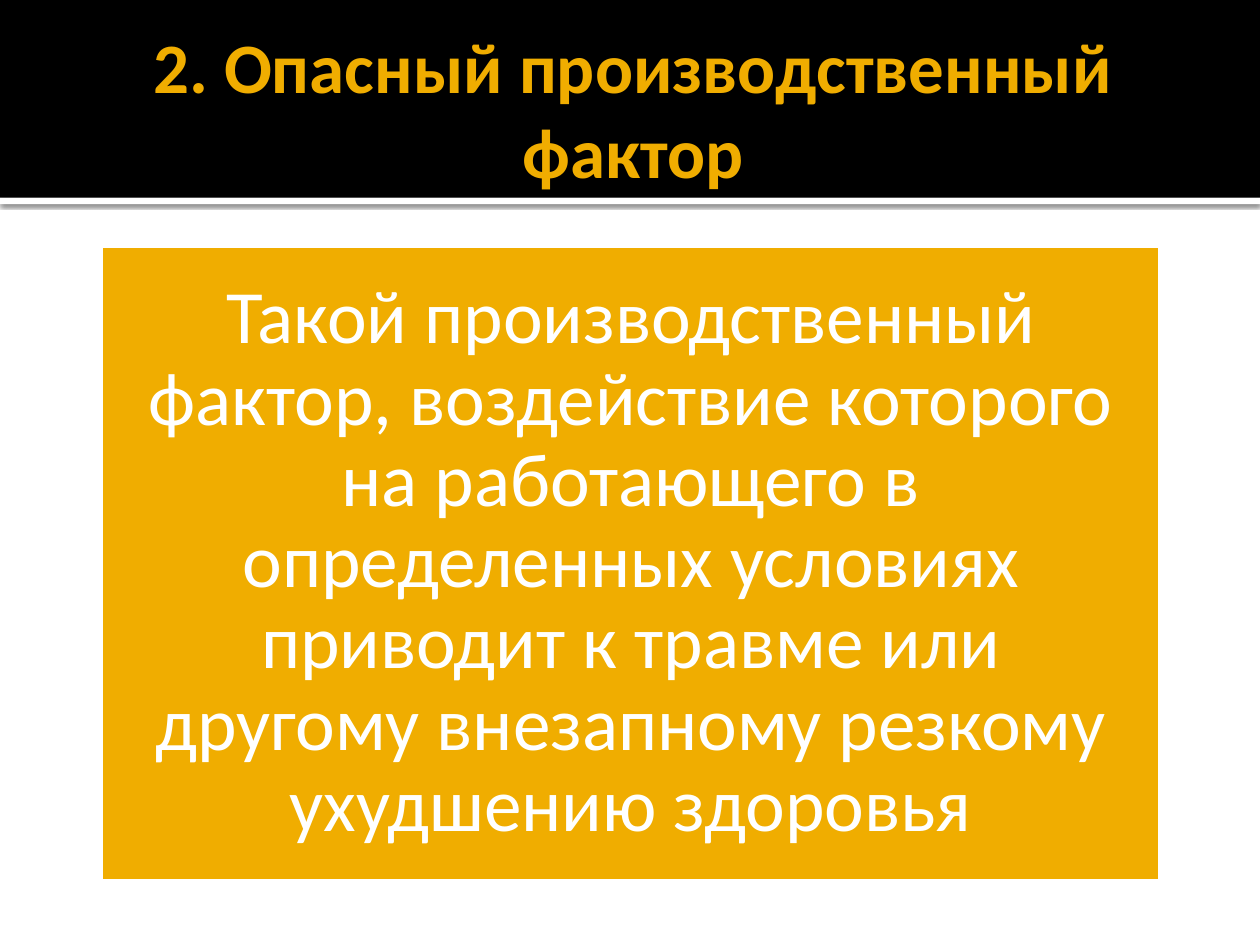
from dataclasses import dataclass

from lxml import etree
from pptx import Presentation
from pptx.dml.color import RGBColor
from pptx.enum.shapes import MSO_SHAPE
from pptx.enum.text import MSO_ANCHOR, MSO_AUTO_SIZE, PP_ALIGN
from pptx.oxml.ns import qn
from pptx.util import Inches, Pt

RECTANGLE = MSO_SHAPE.RECTANGLE
CENTER = PP_ALIGN.CENTER
MIDDLE = MSO_ANCHOR.MIDDLE
NO_AUTOFIT = MSO_AUTO_SIZE.NONE
TITLE_ONLY_LAYOUT = 5


@dataclass(frozen=True)
class Theme:
    font: str = "Calibri"
    accent: RGBColor = RGBColor(0xF0, 0xAD, 0x00)
    black: RGBColor = RGBColor(0x00, 0x00, 0x00)
    white: RGBColor = RGBColor(0xFF, 0xFF, 0xFF)
    title_size: float = 40.5
    body_size: float = 43
    border_width: float = 3.78


THEME = Theme()
SLIDE_WIDTH, SLIDE_HEIGHT = 10, 7.5
HEADER_HEIGHT = 1.57
RULE_HEIGHT = 0.05
TITLE = "2. Опасный производственный фактор"
DEFINITION = (
    "Такой производственный фактор, воздействие которого на работающего "
    "в определенных условиях приводит к травме или другому внезапному "
    "резкому ухудшению здоровья"
)


def add_rectangle(slide, left, top, width, height, fill):
    shape = slide.shapes.add_shape(
        RECTANGLE, Inches(left), Inches(top), Inches(width), Inches(height)
    )
    shape.shadow.inherit = False
    shape.fill.solid()
    shape.fill.fore_color.rgb = fill
    shape.line.fill.background()
    return shape


def add_soft_shadow(shape):
    """Cast a blurred black shadow straight down."""
    effects = shape._element.spPr.find(qn("a:effectLst"))
    shadow = etree.SubElement(
        effects, qn("a:outerShdw"), blurRad=str(Pt(2.5)), dist=str(Pt(0.8)),
        dir="5400000", algn="tl", rotWithShape="0",
    )
    color = etree.SubElement(shadow, qn("a:srgbClr"), val=str(THEME.black))
    etree.SubElement(color, qn("a:alpha"), val="60000")


def write_text(shape, text, size, color, margins, bold=False, line_spacing=1.0):
    """Fill the shape with one centred paragraph; margins run left, top, right, bottom."""
    frame = shape.text_frame
    frame.text = text
    frame.word_wrap = True
    frame.auto_size = NO_AUTOFIT
    frame.vertical_anchor = MIDDLE
    (frame.margin_left, frame.margin_top,
     frame.margin_right, frame.margin_bottom) = map(Inches, margins)
    paragraph = frame.paragraphs[0]
    paragraph.alignment = CENTER
    paragraph.line_spacing = line_spacing
    font = paragraph.font
    font.name = THEME.font
    font.size = Pt(size)
    font.bold = bold
    font.color.rgb = color


def add_header(slide):
    rule = add_rectangle(slide, 0, HEADER_HEIGHT, SLIDE_WIDTH, RULE_HEIGHT, THEME.white)
    add_soft_shadow(rule)
    add_rectangle(slide, 0, 0, SLIDE_WIDTH, HEADER_HEIGHT, THEME.black)


def place_title(slide):
    """Set the title and bring it in front of the header band."""
    title = slide.shapes.title
    title.left, title.top = Inches(0.5), Inches(0.17)
    title.width, title.height = Inches(9), Inches(1.37)
    write_text(title, TITLE, THEME.title_size, THEME.accent,
               (0.1, 0.05, 0.05, 0.05), bold=True)
    slide.shapes._spTree.append(title._element)


def add_definition(slide):
    panel = add_rectangle(slide, 0.79, 1.94, 8.43, 5.06, THEME.accent)
    panel.line.color.rgb = THEME.white
    panel.line.width = Pt(THEME.border_width)
    write_text(panel, DEFINITION, THEME.body_size, THEME.white,
               (0.18,) * 4, line_spacing=0.9)


def main():
    presentation = Presentation()
    presentation.slide_width = Inches(SLIDE_WIDTH)
    presentation.slide_height = Inches(SLIDE_HEIGHT)
    slide = presentation.slides.add_slide(presentation.slide_layouts[TITLE_ONLY_LAYOUT])
    add_header(slide)
    place_title(slide)
    add_definition(slide)
    presentation.save("out.pptx")


if __name__ == "__main__":
    main()
